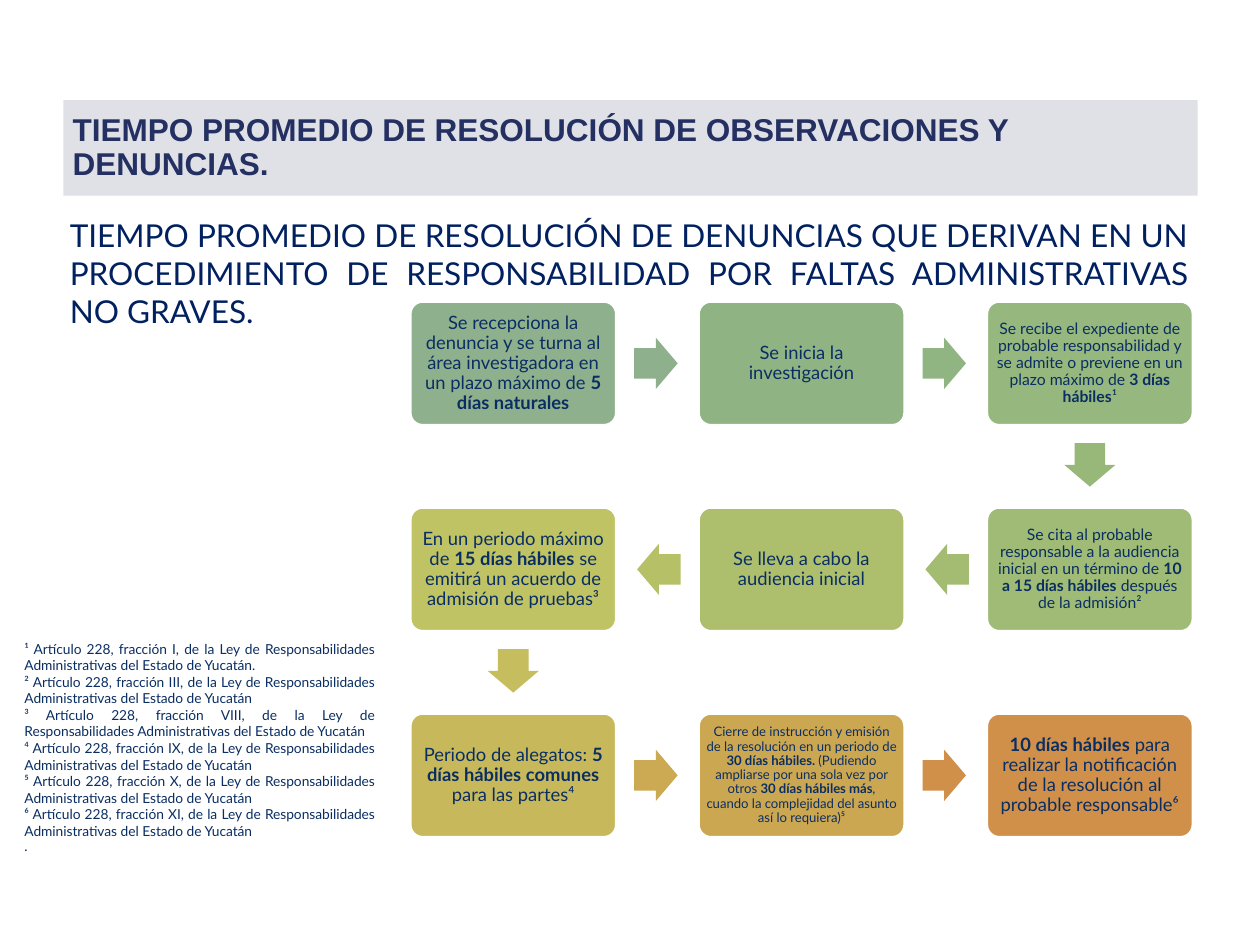
import pptx
import pptx.dml.color
import pptx.enum.shapes
import pptx.enum.text
import pptx.util

EMU_PER_PX = 9144
SHAPES = pptx.enum.shapes.MSO_SHAPE
ALIGN = pptx.enum.text.PP_ALIGN
ANCHOR = pptx.enum.text.MSO_ANCHOR
NAVY = "0A2E62"

TITLE = "TIEMPO PROMEDIO DE RESOLUCIÓN DE OBSERVACIONES Y DENUNCIAS."
SUBTITLE = (
    "TIEMPO PROMEDIO DE RESOLUCIÓN DE DENUNCIAS QUE DERIVAN EN UN PROCEDIMIENTO "
    "DE RESPONSABILIDAD POR FALTAS ADMINISTRATIVAS NO GRAVES."
)
FRACTIONS = [("¹", "I"), ("²", "III"), ("³", "VIII"), ("⁴", "IX"), ("⁵", "X"), ("⁶", "XI")]

# Each step: text with *bold* parts, font size, inset, box colour, colour of the arrow that follows
STEPS = [
    ("Se recepciona la denuncia y se turna al área investigadora en un plazo máximo de "
     "*5 días naturales*", 14, 6, "8FB08C", "8FB08C"),
    ("Se inicia la investigación", 14, 6, "90B384", "91B483"),
    ("Se recibe el expediente de probable responsabilidad y se admite o previene en un "
     "plazo máximo de *3 días hábiles*¹", 12, 5, "96B77D", "98B87A"),
    ("Se cita al probable responsable a la audiencia inicial en un término de "
     "*10 a 15 días hábiles* después de la admisión²", 12, 5, "9FBB75", "A4BC71"),
    ("Se lleva a cabo la audiencia inicial", 14, 6, "ADBF6C", "B6C167"),
    ("En un periodo máximo de *15 días hábiles* se emitirá un acuerdo de admisión de "
     "pruebas³", 14, 6, "BFC364", "C6BE5E"),
    ("Periodo de alegatos: *5 días hábiles comunes* para las partes⁴",
     14, 6, "C7B95B", "CBAA53"),
    ("Cierre de instrucción y emisión de la resolución en un periodo de *30 días hábiles.* "
     "(Pudiendo ampliarse por una sola vez por otros *30 días hábiles más*, cuando la "
     "complejidad del asunto así lo requiera)⁵", 10, 4, "CCA752", "D19049"),
    ("*10 días hábiles* para realizar la notificación de la resolución al probable "
     "responsable⁶", 14, 6, "D19049", None),
]


def px(length):
    """Turn px into EMU."""
    return pptx.util.Emu(round(length * EMU_PER_PX))


def colour(value):
    """Turn a hex string into a colour."""
    return pptx.dml.color.RGBColor.from_string(value)


def add_filled_shape(slide, kind, box, fill):
    """Add a flat preset shape without an outline."""
    shape = slide.shapes.add_shape(kind, *map(px, box))
    shape.shadow.inherit = False
    shape.fill.solid()
    shape.fill.fore_color.rgb = colour(fill)
    shape.line.fill.background()
    return shape


def format_paragraph(paragraph, size, font_name, hex_colour, alignment):
    """Set the alignment of a paragraph and the font of its runs."""
    paragraph.alignment = alignment
    for run in paragraph.runs:
        run.font.size = pptx.util.Pt(size)
        run.font.name = font_name
        run.font.color.rgb = colour(hex_colour)


def add_text_box(slide, box, text, size, hex_colour):
    """Add a wrapped, justified text box."""
    shape = slide.shapes.add_textbox(*map(px, box))
    text_frame = shape.text_frame
    text_frame.word_wrap = True
    text_frame.text = text
    for paragraph in text_frame.paragraphs:
        format_paragraph(paragraph, size, "Lato", hex_colour, ALIGN.JUSTIFY)
    return text_frame


def add_title(slide, box):
    """Add the title band."""
    band = add_filled_shape(slide, SHAPES.RECTANGLE, box, "DFE1E7")
    text_frame = band.text_frame
    text_frame.text = TITLE
    text_frame.vertical_anchor = ANCHOR.MIDDLE
    paragraph = text_frame.paragraphs[0]
    paragraph.line_spacing = 0.9
    format_paragraph(paragraph, 24, "Arial", "242F62", ALIGN.LEFT)
    paragraph.runs[0].font.bold = True


def add_footnotes(slide, box):
    """Add the legal references, closed by a full stop on its own line."""
    notes = [
        f"{mark} Artículo 228, fracción {fraction}, de la Ley de Responsabilidades "
        "Administrativas del Estado de Yucatán"
        for mark, fraction in FRACTIONS
    ]
    notes[0] += "."
    text_frame = add_text_box(slide, box, "\n".join(notes + ["."]), 10.5, NAVY)
    text_frame.auto_size = pptx.enum.text.MSO_AUTO_SIZE.SHAPE_TO_FIT_TEXT
    text_frame.paragraphs[-1].line_spacing = pptx.util.Pt(12)


def add_step(slide, box, text, size, inset, fill):
    """Add one rounded step with its partly bold text."""
    step = add_filled_shape(slide, SHAPES.ROUNDED_RECTANGLE, box, fill)
    step.adjustments[0] = 0.1
    step.line.color.rgb = colour("FFFFFF")
    step.line.width = pptx.util.Pt(2)
    text_frame = step.text_frame
    text_frame.word_wrap = True
    text_frame.vertical_anchor = ANCHOR.MIDDLE
    text_frame.margin_left = text_frame.margin_right = px(inset)
    text_frame.margin_top = text_frame.margin_bottom = px(inset)
    paragraph = text_frame.paragraphs[0]
    paragraph.line_spacing = 0.9
    for index, part in enumerate(text.split("*")):
        if part:
            run = paragraph.add_run()
            run.text = part
            run.font.bold = index % 2 == 1
    format_paragraph(paragraph, size, "Lato", NAVY, ALIGN.CENTER)


def add_arrow(slide, centre_x, centre_y, rotation, fill):
    """Add a block arrow around its centre."""
    width, height = 46, 54
    box = (centre_x - width / 2, centre_y - height / 2, width, height)
    arrow = add_filled_shape(slide, SHAPES.RIGHT_ARROW, box, fill)
    arrow.adjustments[0] = 0.6
    arrow.adjustments[1] = 0.5
    arrow.rotation = rotation


def add_process(slide, box):
    """Lay the steps out in a winding grid of three columns."""
    left, top, width, height = box
    columns, step_width, step_height, arrow_offset = 3, 218, 131, 42
    rows = len(STEPS) // columns
    pitch_x = (width - step_width) / (columns - 1)
    pitch_y = (height - step_height) / (rows - 1)
    for index, (text, size, inset, fill, arrow_fill) in enumerate(STEPS):
        row, position = divmod(index, columns)
        forward = row % 2 == 0
        column = position if forward else columns - 1 - position
        x, y = left + column * pitch_x, top + row * pitch_y
        add_step(slide, (x, y, step_width, step_height), text, size, inset, fill)
        if arrow_fill is None:
            continue
        centre_x, centre_y = x + step_width / 2, y + step_height / 2
        if position == columns - 1:
            centre_y += step_height / 2 + arrow_offset
            rotation = 90
        else:
            direction = 1 if forward else -1
            centre_x += direction * (step_width / 2 + arrow_offset)
            rotation = 0 if forward else 180
        add_arrow(slide, centre_x, centre_y, rotation, arrow_fill)


def main():
    """Build and save the presentation."""
    presentation = pptx.Presentation()
    presentation.slide_width = px(1333)
    presentation.slide_height = px(1000)
    slide = presentation.slides.add_slide(presentation.slide_layouts[6])
    add_title(slide, (67, 106, 1200, 101))
    add_text_box(slide, (64, 224, 1203, 173), SUBTITLE, 24, "002060")
    add_footnotes(slide, (16, 673, 391, 239))
    add_process(slide, (434, 319, 828, 567))
    presentation.save("out.pptx")


if __name__ == "__main__":
    main()
